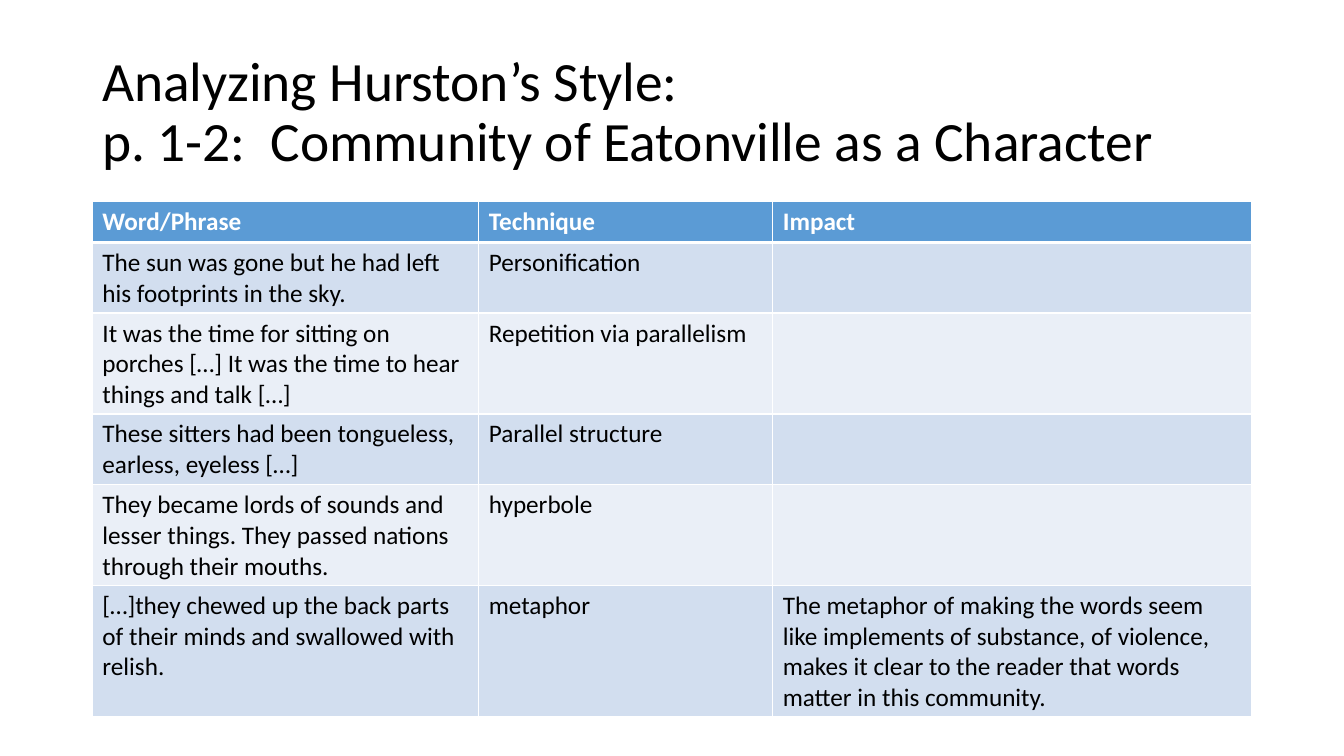
import pptx
import pptx.dml.color
import pptx.enum.text
import pptx.oxml.ns
import pptx.util
from lxml import etree

Pt = pptx.util.Pt
COLORS = {"text": "000000", "white": "FFFFFF", "header": "5B9BD5",
          "band_dark": "D2DEEF", "band_light": "EAEFF7"}
LEFT, WIDTH = 66, 828

ROWS = [
    ("Word/Phrase", "Technique", "Impact"),
    ("The sun was gone but he had left his footprints in the sky.",
     "Personification", ""),
    ("It was the time for sitting on porches […] It was the time to hear "
     "things and talk […]", "Repetition via parallelism", ""),
    ("These sitters had been tongueless, earless, eyeless […]",
     "Parallel structure", ""),
    ("They became lords of sounds and lesser things. They passed nations "
     "through their mouths.", "hyperbole", ""),
    ("[…]they chewed up the back parts of their minds and swallowed with "
     "relish.", "metaphor",
     "The metaphor of making the words seem like implements of substance, of "
     "violence, makes it clear to the reader that words matter in this "
     "community."),
]


class Deck:
    font = "Calibri"

    def __init__(self, width, height):
        self.prs = pptx.Presentation()
        self.prs.slide_width, self.prs.slide_height = Pt(width), Pt(height)
        self.s = self.prs.slides.add_slide(self.prs.slide_layouts[6])

    def rgb(self, name):
        return pptx.dml.color.RGBColor.from_string(COLORS[name])

    def style(self, p, size, color, bold=False):
        p.font.name, p.font.size, p.font.bold = self.font, Pt(size), bold
        p.font.color.rgb = self.rgb(color)

    def title(self, text, x, y, w, h, size):
        tf = self.s.shapes.add_textbox(Pt(x), Pt(y), Pt(w), Pt(h)).text_frame
        tf.word_wrap = True
        tf.vertical_anchor = pptx.enum.text.MSO_ANCHOR.MIDDLE
        p = tf.paragraphs[0]
        p.text = text
        p.line_spacing = 0.9
        self.style(p, size, "text")

    def border(self, cell, side, width):
        qn = pptx.oxml.ns.qn
        tcPr = cell._tc.get_or_add_tcPr()
        ln = etree.SubElement(tcPr, qn("a:ln" + side), w=str(Pt(width)))
        fill = etree.SubElement(ln, qn("a:solidFill"))
        etree.SubElement(fill, qn("a:srgbClr"), val=COLORS["white"])

    def table(self, rows, x, y, col_widths, row_height, size):
        table = self.s.shapes.add_table(
            len(rows), len(col_widths), Pt(x), Pt(y),
            Pt(sum(col_widths)), Pt(row_height * len(rows))).table
        for column, width in zip(table.columns, col_widths):
            column.width = Pt(width)
        for i, row in enumerate(rows):
            header = i == 0
            band = "header" if header else ("band_light", "band_dark")[i % 2]
            for j, text in enumerate(row):
                cell = table.cell(i, j)
                # Thick rule between header and body
                self.border(cell, "L", 1)
                self.border(cell, "R", 1)
                self.border(cell, "T", 3 if i == 1 else 1)
                self.border(cell, "B", 3 if header else 1)
                cell.fill.solid()
                cell.fill.fore_color.rgb = self.rgb(band)
                p = cell.text_frame.paragraphs[0]
                p.text = text
                self.style(p, size, "white" if header else "text", header)


def main():
    deck = Deck(960, 540)

    # Title
    deck.title("Analyzing Hurston’s Style:\v"
               "p. 1-2:  Community of Eatonville as a Character",
               LEFT, 28.75, WIDTH, 104.4, 39.6)

    # Style analysis table; rows grow to fit their text
    deck.table(ROWS, LEFT, 144, (276, 210, WIDTH - 276 - 210), 29.2, 18)

    deck.prs.save("out.pptx")


if __name__ == "__main__":
    main()
